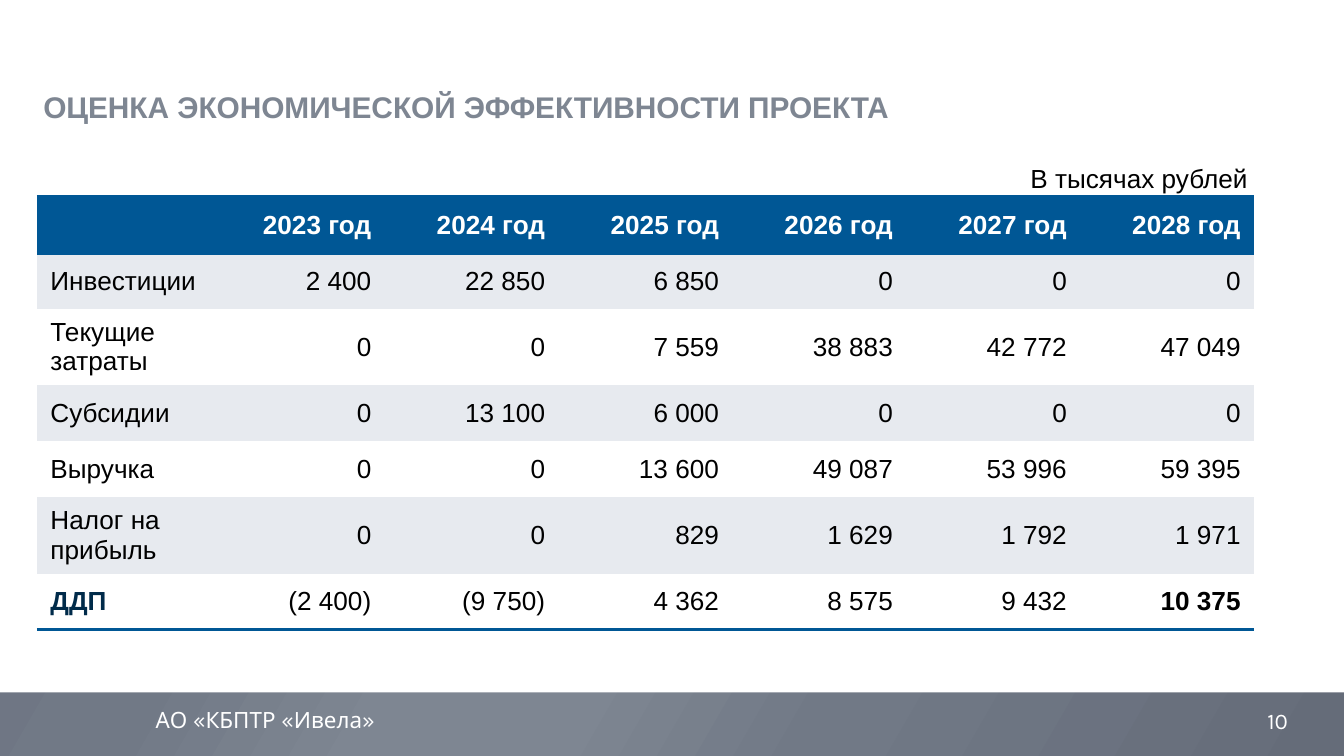
from lxml import etree
from pptx import Presentation
from pptx.dml.color import RGBColor
from pptx.enum.shapes import MSO_SHAPE
from pptx.enum.text import MSO_ANCHOR, PP_ALIGN
from pptx.oxml import parse_xml
from pptx.oxml.ns import nsdecls, qn
from pptx.util import Pt

WHITE = RGBColor(0xFF, 0xFF, 0xFF)
BLACK = RGBColor(0x00, 0x00, 0x00)
BLUE = RGBColor(0x00, 0x57, 0x95)
NAVY = RGBColor(0x00, 0x2B, 0x4A)
GREY = RGBColor(0x7E, 0x86, 0x92)
PALE = RGBColor(0xE7, 0xEA, 0xEF)
GRADIENT = [
    (0, RGBColor(0x65, 0x6C, 0x7E)), (30, RGBColor(0x71, 0x79, 0x86)),
    (45, GREY), (55, GREY),
    (70, RGBColor(0x71, 0x79, 0x86)), (100, RGBColor(0x65, 0x6C, 0x79)),
]
GRADIENT_ANGLE = 30
NO_STYLE = "{2D5ABB26-0587-4C30-8999-92F81FD0307C}"

WIDTH, HEIGHT, BODY_HEIGHT = 720, 405, 371
COLUMN_WIDTH = 93.15
LINE_ROW, TWO_LINE_ROW = 30, 38.5
TWO_LINE_LABELS = ("Текущие затраты", "Налог на прибыль")
ROWS = [
    ["", *(f"{year} год" for year in range(2023, 2029))],
    ["Инвестиции", "2 400", "22 850", "6 850", "0", "0", "0"],
    ["Текущие затраты", "0", "0", "7 559", "38 883", "42 772", "47 049"],
    ["Субсидии", "0", "13 100", "6 000", "0", "0", "0"],
    ["Выручка", "0", "0", "13 600", "49 087", "53 996", "59 395"],
    ["Налог на прибыль", "0", "0", "829", "1 629", "1 792", "1 971"],
    ["ДДП", "(2 400)", "(9 750)", "4 362", "8 575", "9 432", "10 375"],
]


class SlideBuilder:
    def __init__(self, deck):
        self.page = deck.slides.add_slide(deck.slide_layouts[5])
        self.body_format = {"name": "Arial", "size": Pt(14), "bold": False}
        self.footer_format = {"name": "Karla", "size": Pt(12), "bold": False}

    def fill_text(self, frame, text, color, formats, align=PP_ALIGN.LEFT):
        para = frame.paragraphs[0]
        para.alignment = align
        span = para.add_run()
        span.text = text
        for name, value in formats.items():
            setattr(span.font, name, value)
        span.font.color.rgb = color

    def title(self, text, left, top, width, height):
        box = self.page.shapes.title
        box.left, box.top = Pt(left), Pt(top)
        box.width, box.height = Pt(width), Pt(height)
        box.text_frame.vertical_anchor = MSO_ANCHOR.TOP
        self.fill_text(box.text_frame, text, GREY,
                       {**self.body_format, "size": Pt(16), "bold": True})

    def text(self, text, bounds, color, formats, align=PP_ALIGN.LEFT,
             anchor=MSO_ANCHOR.TOP):
        box = self.page.shapes.add_textbox(*map(Pt, bounds))
        box.text_frame.word_wrap = True
        box.text_frame.vertical_anchor = anchor
        self.fill_text(box.text_frame, text, color, formats, align)

    def backdrop(self, height, level):
        """Add a full-width rectangle at the given level behind the title."""
        shape = self.page.shapes.add_shape(
            MSO_SHAPE.RECTANGLE, 0, 0, Pt(WIDTH), Pt(height))
        shape.shadow.inherit = False
        shape.line.fill.background()
        shape.fill.solid()
        shape.fill.fore_color.rgb = WHITE
        # The first two children of the shape tree are its properties.
        self.page.shapes._spTree.insert(2 + level, shape._element)
        return shape

    def gradient(self, shape):
        stops = "".join(
            f'<a:gs pos="{position * 1000}"><a:srgbClr val="{color}"/></a:gs>'
            for position, color in GRADIENT)
        fill = parse_xml(
            f'<a:gradFill {nsdecls("a")} rotWithShape="1"><a:gsLst>{stops}</a:gsLst>'
            f'<a:lin ang="{GRADIENT_ANGLE * 60000}" scaled="0"/></a:gradFill>')
        properties = shape._element.spPr
        properties.replace(properties.find(qn("a:solidFill")), fill)

    def border(self, cell, side):
        line = etree.SubElement(cell._tc.get_or_add_tcPr(), qn(f"a:ln{side}"),
                                w=str(Pt(2)))
        fill = etree.SubElement(line, qn("a:solidFill"))
        etree.SubElement(fill, qn("a:srgbClr"), val=str(BLUE))

    def table(self, rows, left, top):
        heights = [TWO_LINE_ROW if row[0] in TWO_LINE_LABELS else LINE_ROW
                   for row in rows]
        columns, last = len(rows[0]), len(rows) - 1
        table = self.page.shapes.add_table(
            len(rows), columns, Pt(left), Pt(top),
            Pt(COLUMN_WIDTH * columns), Pt(sum(heights))).table
        table.first_row = table.horz_banding = False
        table._tbl.tblPr.find(qn("a:tableStyleId")).text = NO_STYLE
        for column in table.columns:
            column.width = Pt(COLUMN_WIDTH)
        for index, row in enumerate(rows):
            table.rows[index].height = Pt(heights[index])
            sides = {0: "TB", last: "B"}.get(index, "")
            for position, text in enumerate(row):
                cell = table.cell(index, position)
                for side in sides:
                    self.border(cell, side)
                cell.fill.solid()
                cell.fill.fore_color.rgb = (
                    BLUE if index == 0 else PALE if index % 2 else WHITE)
                cell.vertical_anchor = MSO_ANCHOR.MIDDLE
                if not text:
                    continue
                is_total_label = index == last and position == 0
                color = WHITE if index == 0 else NAVY if is_total_label else BLACK
                bold = index == 0 or (index == last and position in (0, columns - 1))
                self.fill_text(cell.text_frame, text, color,
                               {**self.body_format, "bold": bold},
                               PP_ALIGN.RIGHT if position else PP_ALIGN.LEFT)


def main():
    deck = Presentation()
    deck.slide_width, deck.slide_height = Pt(WIDTH), Pt(HEIGHT)
    builder = SlideBuilder(deck)
    builder.gradient(builder.backdrop(HEIGHT, 0))
    builder.backdrop(BODY_HEIGHT, 1)
    builder.title("ОЦЕНКА ЭКОНОМИЧЕСКОЙ ЭФФЕКТИВНОСТИ ПРОЕКТА", 16, 44, 567, 51)
    builder.text("АО «КБПТР «Ивела»", (76.3, 375, 168, 22), WHITE,
                 builder.footer_format)
    builder.text("10", (649, 375, 71, 22), WHITE, builder.footer_format,
                 PP_ALIGN.CENTER, MSO_ANCHOR.MIDDLE)
    builder.table(ROWS, 19.8, 105.6)
    builder.text("В тысячах рублей", (541.5, 83.5, 137.5, 24.5), BLACK,
                 builder.body_format, PP_ALIGN.CENTER)
    deck.save("out.pptx")


if __name__ == "__main__":
    main()
